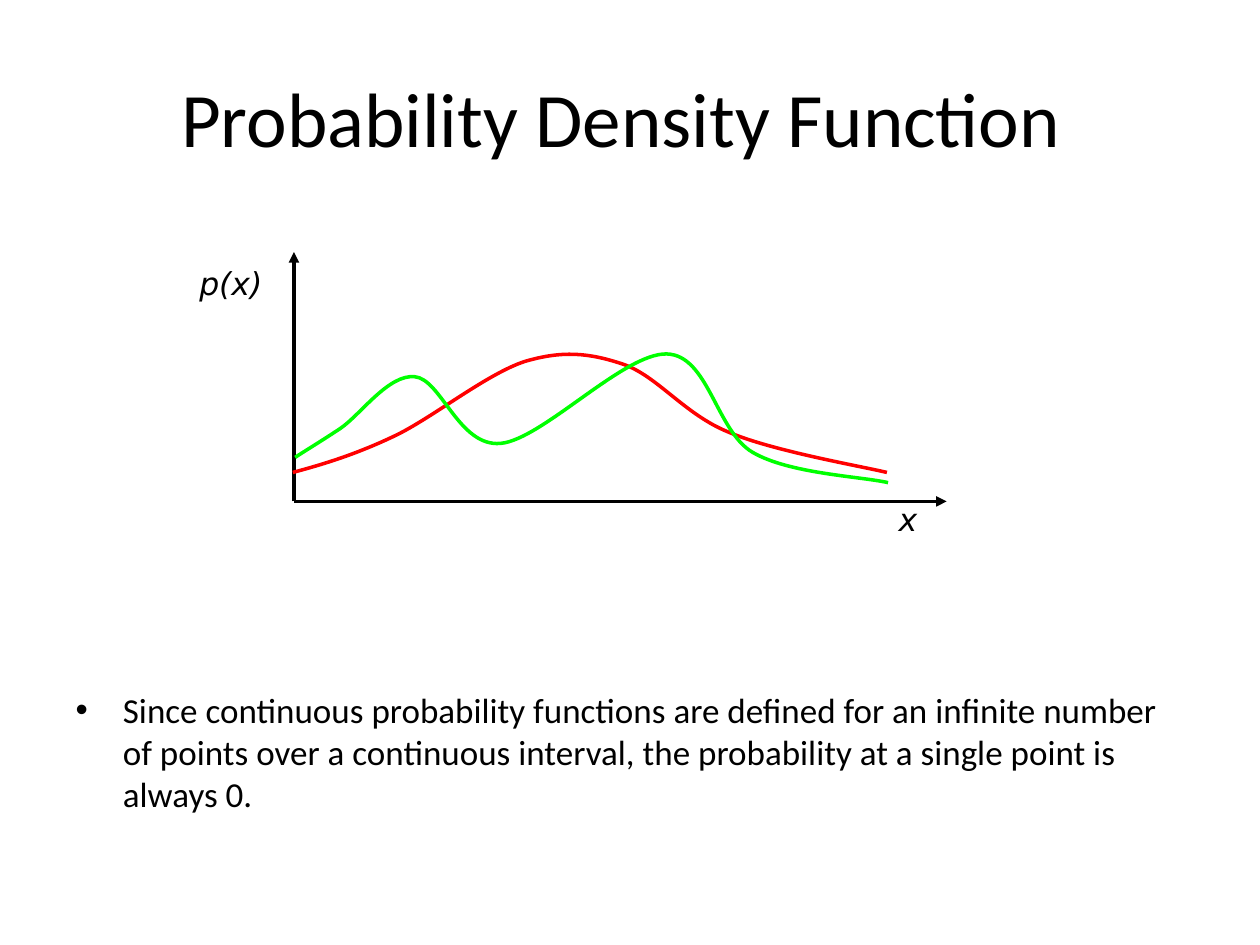
from lxml import etree
from pptx import Presentation
from pptx.dml.color import RGBColor
from pptx.enum import shapes, text
from pptx.oxml.ns import qn
from pptx.util import Pt

BLACK, RED, GREEN = "000000", "FF0000", "00FF00"

# Start point, then two control points and an end point for each segment,
# in points from the top left of the plot.
BROAD_CURVE = [
    (-0.7, 126),
    (18, 121), (36.7, 115.2), (59, 104.4),
    (80.6, 93.6), (110.2, 69.8), (131.8, 62.6),
    (153.4, 56.2), (168.5, 57.6), (187.9, 64.1),
    (207.4, 70.6), (223.2, 92.9), (248.4, 103),
    (273.6, 113.8), (324, 122.4), (338.8, 126),
]
TWO_PEAK_CURVE = [
    (0.7, 117.4),
    (5, 114.5), (15.8, 108), (26.6, 100.8),
    (38.2, 92.9), (54, 69.8), (69.1, 71.3),
    (84.2, 72.7), (94.3, 111.6), (118.1, 109.4),
    (141.8, 107.3), (188.6, 57.6), (213.1, 58.3),
    (236.9, 59), (241.2, 102.2), (262.1, 114.5),
    (283, 126.7), (323.3, 128.2), (339.5, 131.8),
]


def rgb(value):
    return RGBColor.from_string(value)


def write(tf, words, size, font="Calibri", color=BLACK, italic=None,
          align=None, spacing=None):
    p = tf.paragraphs[0]
    p.alignment, p.line_spacing = align, spacing
    r = p.add_run()
    r.text = words
    f = r.font
    f.name, f.size, f.italic = font, Pt(size), italic
    f.color.rgb = rgb(color)


def place(sp, left, top, width, height):
    sp.left, sp.top = Pt(left), Pt(top)
    sp.width, sp.height = Pt(width), Pt(height)


def style_line(line, color):
    line.color.rgb = rgb(color)
    line.width = Pt(2)


def add_axis(s, x1, y1, x2, y2):
    axis = s.shapes.add_connector(shapes.MSO_CONNECTOR.STRAIGHT,
                                  Pt(x1), Pt(y1), Pt(x2), Pt(y2))
    style_line(axis.line, BLACK)
    ln = axis._element.spPr.find(qn("a:ln"))
    etree.SubElement(ln, qn("a:tailEnd"), type="triangle")
    etree.SubElement(axis._element.spPr, qn("a:effectLst"))


def bend(sp):
    """Turn every three straight pieces of a freeform into one Bezier segment."""
    pieces = list(sp._element.iter(qn("a:lnTo")))
    for i in range(0, len(pieces), 3):
        segment = etree.Element(qn("a:cubicBezTo"))
        pieces[i].addprevious(segment)
        for piece in pieces[i:i + 3]:
            segment.append(piece[0])
            piece.getparent().remove(piece)


def add_curve(s, left, top, nodes, color):
    start, *rest = [(Pt(left + x), Pt(top + y)) for x, y in nodes]
    builder = s.shapes.build_freeform(*start)
    builder.add_line_segments(rest, close=False)
    curve = builder.convert_to_shape()
    bend(curve)
    curve.shadow.inherit = False
    curve.fill.background()
    style_line(curve.line, color)


def add_label(s, words, left, top, width, height=26.6):
    box = s.shapes.add_textbox(Pt(left), Pt(top), Pt(width), Pt(height))
    tf = box.text_frame
    tf.word_wrap = False
    tf.auto_size = text.MSO_AUTO_SIZE.SHAPE_TO_FIT_TEXT
    write(tf, words, 18, font="DejaVu Sans", italic=True, spacing=0.9)


def add_density_plot(s, left, top, width, height):
    bottom = top + height
    add_axis(s, left, bottom, left + width, bottom)
    add_axis(s, left, bottom, left, top)
    add_curve(s, left, top, BROAD_CURVE, RED)
    add_curve(s, left, top, TWO_PEAK_CURVE, GREEN)
    add_label(s, "x", left + width - 34.6, bottom - 2, 25.2)
    add_label(s, "p(x)", left - 61.2, top + 5.8, 52.6)


def add_title(s, left, top, width, height):
    title = s.shapes.title
    place(title, left, top, width, height)
    title.text_frame.vertical_anchor = text.MSO_ANCHOR.MIDDLE
    write(title.text_frame, "Probability Density Function ", 44,
          align=text.PP_ALIGN.CENTER)


def add_body(s, left, top, width, height):
    body = s.placeholders[1]
    place(body, left, top, width, height)
    write(body.text_frame,
          "Since continuous probability functions are defined for an infinite "
          "number of points over a continuous interval, the probability at a "
          "single point is always 0.", 20)


def main():
    prs = Presentation()
    prs.slide_width, prs.slide_height = Pt(720), Pt(540)
    s = prs.slides.add_slide(prs.slide_layouts[1])
    add_title(s, 36, 21.6, 648, 90)
    add_body(s, 36, 389.8, 648, 95)
    add_density_plot(s, 168, 144, 373, 142.5)
    prs.save("out.pptx")


if __name__ == "__main__":
    main()
